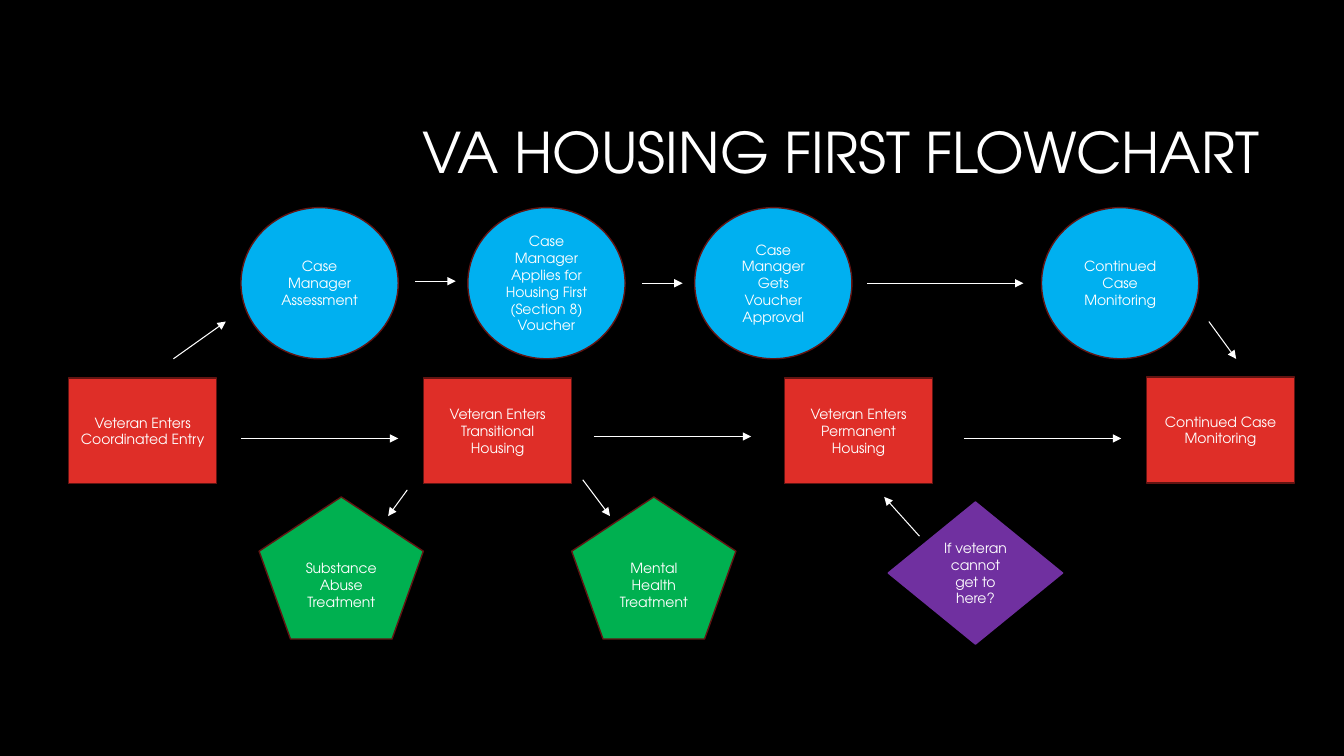
from pptx import Presentation
from pptx.dml.color import RGBColor
from pptx.enum.shapes import MSO_CONNECTOR, MSO_SHAPE
from pptx.enum.text import MSO_ANCHOR, PP_ALIGN
from pptx.oxml.ns import qn
from pptx.util import Inches, Pt
from lxml.etree import SubElement

FONT = "TeX Gyre Adventor"
BLACK = RGBColor(0x00, 0x00, 0x00)
WHITE = RGBColor(0xFF, 0xFF, 0xFF)
RED = RGBColor(0xDF, 0x2E, 0x28)
MAROON = RGBColor(0x62, 0x14, 0x12)
BLUE = RGBColor(0x00, 0xB0, 0xF0)
GREEN = RGBColor(0x00, 0xB0, 0x50)
PURPLE = RGBColor(0x70, 0x30, 0xA0)


def write(frame, text, size, align):
    frame.word_wrap = True
    frame.vertical_anchor = MSO_ANCHOR.MIDDLE
    para = frame.paragraphs[0]
    para.alignment = align
    run = para.add_run()
    run.text = text
    run.font.name = FONT
    run.font.size = Pt(size)
    run.font.color.rgb = WHITE
    return para


prs = Presentation()
prs.slide_width = Inches(13.33)
prs.slide_height = Inches(7.5)
slide = prs.slides.add_slide(prs.slide_layouts[5])
slide.background.fill.solid()
slide.background.fill.fore_color.rgb = BLACK

# Title
title = slide.shapes.title
title.left, title.top = Inches(3.17), Inches(0.84)
title.width, title.height = Inches(9.42), Inches(1.41)
para = write(title.text_frame, "VA HOUSING FIRST FLOWCHART", 40, PP_ALIGN.RIGHT)
para.line_spacing = 0.9

# Steps: each kind has a preset, width, height, fill, line and its places
kinds = [
    (MSO_SHAPE.RECTANGLE, 1.47, 1.05, RED, MAROON, [
        (0.68, 3.75, "Veteran Enters Coordinated Entry"),
        (4.2, 3.75, "Veteran Enters Transitional Housing"),
        (7.78, 3.75, "Veteran Enters Permanent Housing"),
        (11.37, 3.74, "Continued Case Monitoring"),
    ]),
    (MSO_SHAPE.FLOWCHART_CONNECTOR, 1.56, 1.5, BLUE, MAROON, [
        (2.39, 2.06, "Case Manager Assessment"),
        (4.64, 2.06, "Case Manager Applies for Housing First (Section 8) Voucher"),
        (6.89, 2.06, "Case Manager Gets Voucher Approval"),
        (10.33, 2.06, "Continued Case Monitoring"),
    ]),
    (MSO_SHAPE.REGULAR_PENTAGON, 1.63, 1.41, GREEN, MAROON, [
        (2.57, 4.93, "Substance Abuse Treatment"),
        (5.67, 4.93, "Mental Health Treatment"),
    ]),
    (MSO_SHAPE.DIAMOND, 1.73, 1.41, PURPLE, PURPLE, [
        (8.81, 4.98, "If veteran cannot get to here?"),
    ]),
]
for preset, width, height, fill, edge, steps in kinds:
    for left, top, text in steps:
        step = slide.shapes.add_shape(
            preset, Inches(left), Inches(top), Inches(width), Inches(height))
        step.shadow.inherit = False
        step.fill.solid()
        step.fill.fore_color.rgb = fill
        step.line.color.rgb = edge
        step.line.width = Pt(1)
        write(step.text_frame, text, 10, PP_ALIGN.CENTER)

# Arrows: start x, start y, end x, end y
arrows = [
    # Top row
    (1.72, 3.56, 2.24, 3.19),
    (4.12, 2.79, 4.52, 2.79),
    (6.37, 2.81, 6.77, 2.81),
    (8.6, 2.81, 10.15, 2.81),
    (11.99, 3.19, 12.26, 3.56),
    # Middle row
    (2.39, 4.35, 3.95, 4.35),
    (5.89, 4.33, 7.45, 4.33),
    (9.56, 4.35, 11.12, 4.35),
    # Bottom row
    (4.04, 4.86, 3.85, 5.12),
    (5.78, 4.76, 6.05, 5.12),
    (9.12, 5.32, 8.77, 4.93),
]
for ends in arrows:
    arrow = slide.shapes.add_connector(
        MSO_CONNECTOR.STRAIGHT, *[Inches(end) for end in ends])
    arrow.line.color.rgb = WHITE
    arrow.line.width = Pt(0.75)
    SubElement(arrow.line._get_or_add_ln(), qn("a:tailEnd"), type="triangle")
    SubElement(arrow._element.spPr, qn("a:effectLst"))

prs.save("out.pptx")
